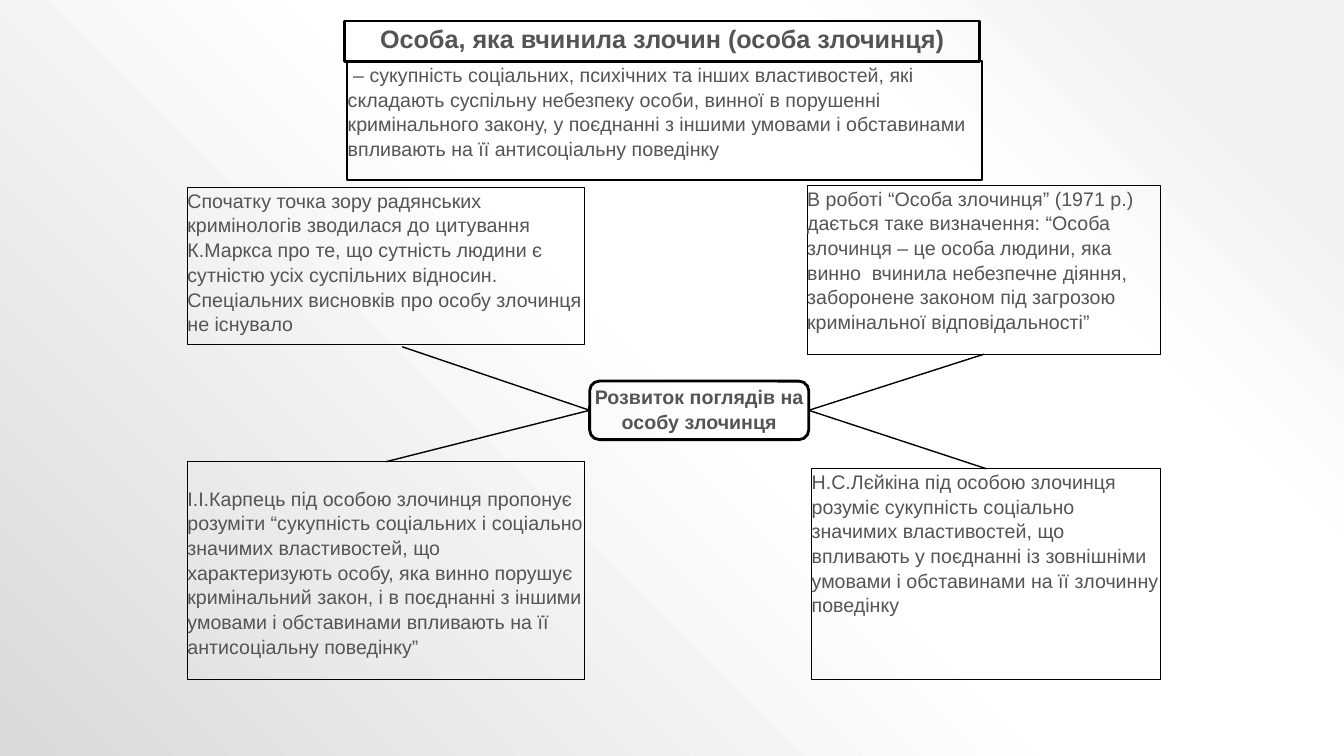
from lxml import etree
from pptx import Presentation
from pptx.dml.color import RGBColor
from pptx.enum.shapes import MSO_CONNECTOR, MSO_SHAPE
from pptx.enum.text import MSO_ANCHOR, MSO_AUTO_SIZE, PP_ALIGN
from pptx.oxml import parse_xml
from pptx.oxml.ns import nsdecls, qn
from pptx.util import Pt

RECTANGLE, ROUNDED = MSO_SHAPE.RECTANGLE, MSO_SHAPE.ROUNDED_RECTANGLE
STRAIGHT = MSO_CONNECTOR.STRAIGHT
TOP, NO_AUTOFIT = MSO_ANCHOR.TOP, MSO_AUTO_SIZE.NONE
LEFT, CENTER = PP_ALIGN.LEFT, PP_ALIGN.CENTER
SIDE_TOP, SIDE_LEFT, SIDE_BOTTOM, SIDE_RIGHT = range(4)
TITLE_ONLY = 5

INK, TEXT = "000000", "545454"
BACKGROUND = [(10, "F2F2F2"), (28, "FFFFFF"), (48, "FFFFFF"), (100, "D9D9D9")]

TITLE = "Особа, яка вчинила злочин (особа злочинця)"
DEFINITION = (
    " – сукупність соціальних, психічних та інших властивостей, які складають "
    "суспільну небезпеку особи, винної в порушенні кримінального закону, у "
    "поєднанні з іншими умовами і обставинами впливають на її антисоціальну поведінку"
)
CENTRE = "Розвиток поглядів на особу злочинця"
EARLY_VIEW = (
    "Спочатку точка зору радянських кримінологів зводилася до цитування К.Маркса "
    "про те, що сутність людини є сутністю усіх суспільних відносин. "
    "Спеціальних висновків про особу злочинця не існувало"
)
VIEW_1971 = (
    "В роботі “Особа злочинця” (1971 р.) дається таке визначення: “Особа злочинця – "
    "це особа людини, яка винно  вчинила небезпечне діяння, заборонене законом під "
    "загрозою кримінальної відповідальності”"
)
KARPETS_VIEW = (
    "І.І.Карпець під особою злочинця пропонує розуміти “сукупність соціальних і "
    "соціально значимих властивостей, що характеризують особу, яка винно порушує "
    "кримінальний закон, і в поєднанні з іншими умовами і обставинами впливають на "
    "її антисоціальну поведінку”"
)
LEIKINA_VIEW = (
    "Н.С.Лєйкіна під особою злочинця розуміє сукупність соціально значимих "
    "властивостей, що впливають у поєднанні із зовнішніми умовами і обставинами "
    "на її злочинну поведінку"
)


def color(value):
    return RGBColor.from_string(value)


def set_format(target, values):
    for name, value in values.items():
        setattr(target, name, value)


def paint_background(slide):
    """Fill the background with a circular gradient centred on the top right corner."""
    slide.background.fill.solid()
    stops = "".join(
        f'<a:gs pos="{percent * 1000}"><a:srgbClr val="{value}"/></a:gs>'
        for percent, value in BACKGROUND
    )
    gradient = parse_xml(
        f'<a:gradFill {nsdecls("a")} rotWithShape="1"><a:gsLst>{stops}</a:gsLst>'
        '<a:path path="circle"><a:fillToRect l="100000" b="100000"/></a:path></a:gradFill>'
    )
    solid = next(slide.element.iter(qn("a:solidFill")))
    solid.getparent().replace(solid, gradient)


def set_outline(line, width):
    line.color.rgb = color(INK)
    line.width = Pt(width)


def format_box(box, text, line_width, size=14, bold=False, align=LEFT, inset=0, top=None):
    box.fill.background()
    set_outline(box.line, line_width)
    frame = box.text_frame
    margins = {f"margin_{side}": Pt(inset) for side in ("left", "right", "bottom")}
    margins["margin_top"] = Pt(inset if top is None else top)
    set_format(frame, {"word_wrap": True, "auto_size": NO_AUTOFIT,
                       "vertical_anchor": TOP, **margins})
    para = frame.paragraphs[0]
    set_format(para, {"alignment": align, "line_spacing": 1.05, "space_before": Pt(0)})
    span = para.add_run()
    span.text = text
    set_format(span.font, {"name": "Arial", "size": Pt(size), "bold": bold})
    span.font.color.rgb = color(TEXT)


def add_title(slide, text, left, top, width, height):
    title = slide.shapes.title
    set_format(title, {"left": Pt(left), "top": Pt(top),
                       "width": Pt(width), "height": Pt(height)})
    format_box(title, text, 2, size=18, bold=True, align=CENTER, inset=0.7)


def add_box(slide, text, bounds, line_width=0.75, kind=RECTANGLE, **style):
    box = slide.shapes.add_shape(kind, *map(Pt, bounds))
    box.shadow.inherit = False
    format_box(box, text, line_width, **style)
    return box


def add_link(slide, centre, centre_side, view=None, view_side=None, end=(0, 0)):
    """Join the centre to a side of a view, or to a free end point."""
    link = slide.shapes.add_connector(STRAIGHT, 0, 0, *map(Pt, end))
    link.begin_connect(centre, centre_side)
    if view is not None:
        link.end_connect(view, view_side)
    set_outline(link.line, 1)
    etree.SubElement(link.element.spPr, qn("a:effectLst"))


def main():
    deck = Presentation()
    deck.slide_width, deck.slide_height = Pt(960), Pt(540)
    slide = deck.slides.add_slide(deck.slide_layouts[TITLE_ONLY])
    paint_background(slide)

    add_title(slide, TITLE, 246.2, 15, 453.6, 28.8)
    add_box(slide, DEFINITION, (247.7, 43.4, 453.6, 85), 1.5, inset=0.7)
    centre = add_box(slide, CENTRE, (421.2, 272.2, 156.5, 41.8), 2, ROUNDED,
                     bold=True, align=CENTER)
    add_box(slide, EARLY_VIEW, (133.9, 134, 283.7, 112.3))
    view_1971 = add_box(slide, VIEW_1971, (576.5, 132.5, 252.7, 120.5))
    karpets = add_box(slide, KARPETS_VIEW, (133.9, 329.8, 283.7, 155.5), top=16.9)
    leikina = add_box(slide, LEIKINA_VIEW, (579.8, 334.8, 249.4, 150.5))

    add_link(slide, centre, SIDE_LEFT, end=(287.3, 247.7))
    add_link(slide, centre, SIDE_LEFT, karpets, SIDE_TOP)
    add_link(slide, centre, SIDE_RIGHT, view_1971, SIDE_BOTTOM)
    add_link(slide, centre, SIDE_RIGHT, leikina, SIDE_TOP)
    deck.save("out.pptx")


if __name__ == "__main__":
    main()
